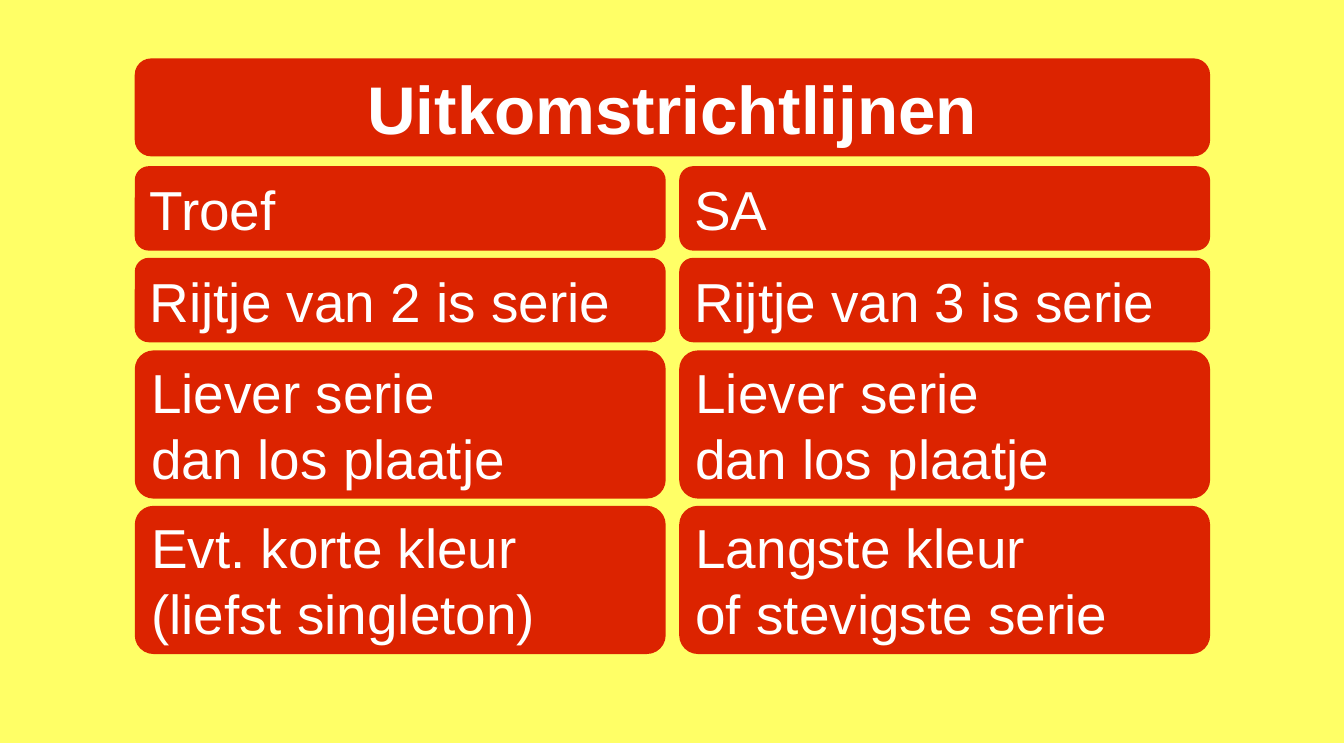
"""Build a slide of opening-lead guidelines for trump and no-trump contracts."""
from dataclasses import dataclass

from pptx import Presentation
from pptx.dml.color import RGBColor
from pptx.enum.shapes import MSO_SHAPE as Preset
from pptx.enum.text import MSO_ANCHOR as Anchor, PP_ALIGN as Align
from pptx.slide import Slide
from pptx.util import Inches, Pt

YELLOW = RGBColor(0xFF, 0xFF, 0x66)
RED = RGBColor(0xDC, 0x23, 0x00)
WHITE = RGBColor(0xFF, 0xFF, 0xFF)

LEFT = 1.5
FULL_WIDTH = 11.97
COLUMN_WIDTH = 5.91
COLUMN_STEP = 6.06


@dataclass(frozen=True)
class Panel:
    """A rounded panel with its lines of text."""

    left: float
    top: float
    width: float
    height: float
    lines: tuple[str, ...]
    corner: float = 0.167
    size: int = 44
    heading: bool = False


@dataclass(frozen=True)
class Guideline:
    """One row, with the advice for each contract type."""

    top: float
    height: float
    corner: float
    advice: tuple[tuple[str, ...], tuple[str, ...]]


TITLE = Panel(LEFT, 0.65, FULL_WIDTH, 1.09, ("Uitkomstrichtlijnen",), size=54, heading=True)

GUIDELINES = (
    Guideline(1.85, 0.94, 0.167, (("Troef",), ("SA",))),
    Guideline(2.87, 0.94, 0.167, (("Rijtje van 2 is serie",), ("Rijtje van 3 is serie",))),
    Guideline(3.9, 1.65, 0.127, (("Liever serie", "dan los plaatje"),) * 2),
    Guideline(5.63, 1.65, 0.127, (
        ("Evt. korte kleur (liefst singleton)",),
        ("Langste kleur", "of stevigste serie"),
    )),
)


def draw_panel(slide: Slide, panel: Panel) -> None:
    """Draw one panel and its text."""
    box = slide.shapes.add_shape(
        Preset.ROUNDED_RECTANGLE,
        Inches(panel.left), Inches(panel.top), Inches(panel.width), Inches(panel.height),
    )
    box.adjustments[0] = panel.corner
    box.shadow.inherit = False
    box.fill.solid()
    box.fill.fore_color.rgb = RED
    box.line.fill.background()

    frame = box.text_frame
    frame.word_wrap = not panel.heading
    frame.vertical_anchor = Anchor.MIDDLE
    frame.margin_left = frame.margin_right = Inches(0.12)
    frame.margin_top = frame.margin_bottom = Inches(0.06)
    for index, line in enumerate(panel.lines):
        paragraph = frame.add_paragraph() if index else frame.paragraphs[0]
        paragraph.alignment = Align.CENTER if panel.heading else Align.LEFT
        run = paragraph.add_run()
        run.text = line
        run.font.name = "Arial"
        run.font.size = Pt(panel.size)
        run.font.bold = panel.heading
        run.font.color.rgb = WHITE


def main() -> None:
    """Build and save the presentation."""
    deck = Presentation()
    deck.slide_width, deck.slide_height = Inches(14.96), Inches(8.27)
    slide = deck.slides.add_slide(deck.slide_layouts[6])
    slide.background.fill.solid()
    slide.background.fill.fore_color.rgb = YELLOW

    draw_panel(slide, TITLE)
    for column in range(2):
        left = LEFT + column * COLUMN_STEP
        for row in GUIDELINES:
            draw_panel(slide, Panel(
                left, row.top, COLUMN_WIDTH, row.height, row.advice[column], row.corner,
            ))
    deck.save("out.pptx")


if __name__ == "__main__":
    main()
